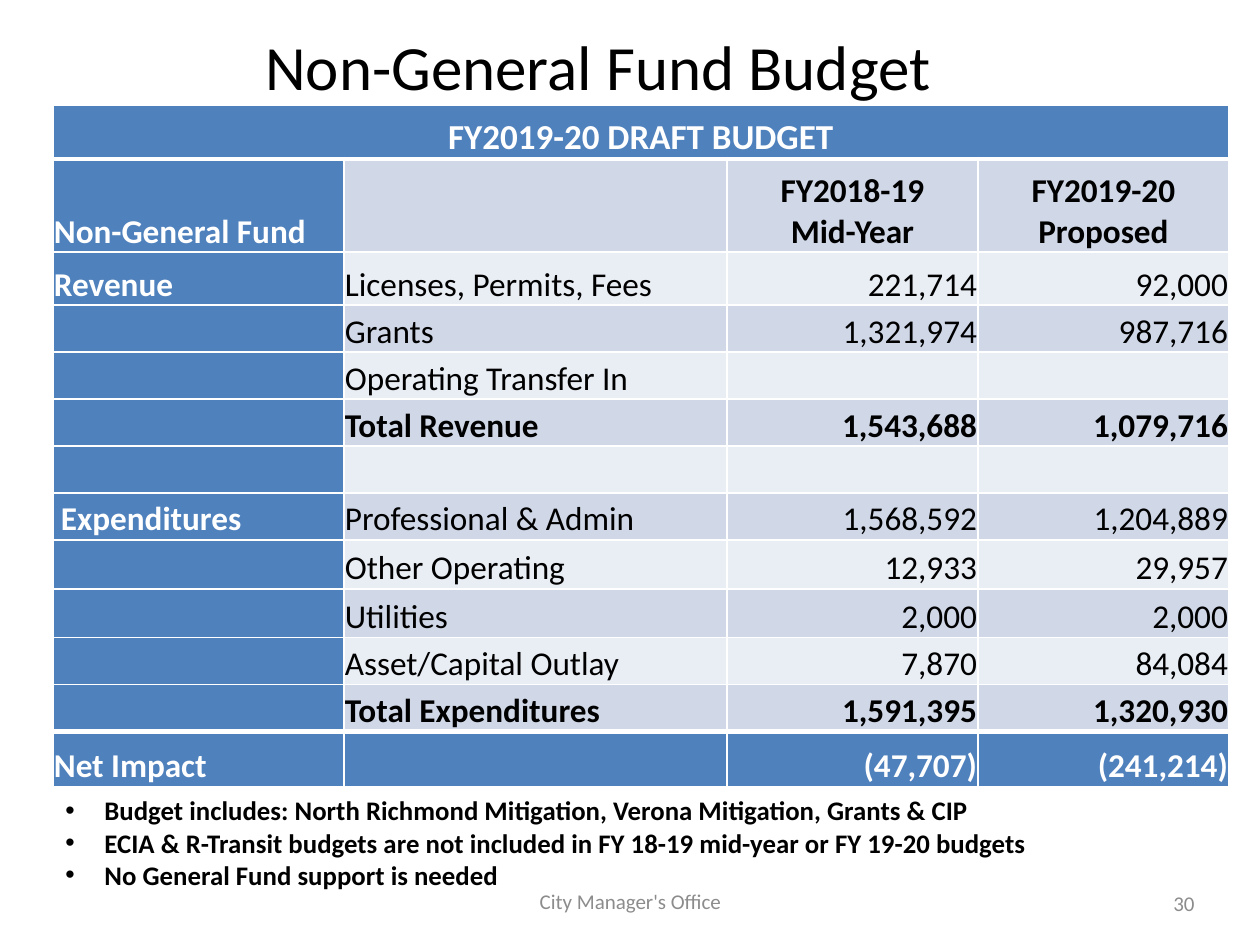
from lxml.etree import SubElement
from pptx import Presentation
from pptx.dml.color import RGBColor
from pptx.enum.text import MSO_ANCHOR as Anchor, PP_ALIGN as Align
from pptx.oxml.ns import qn
from pptx.util import Emu, Pt

PX = 914400 / 126
FONT = "Calibri"
BLUE = RGBColor(0x4F, 0x81, 0xBD)
DARK_BAND = RGBColor(0xD0, 0xD8, 0xE8)
LIGHT_BAND = RGBColor(0xE9, 0xED, 0xF4)
WHITE = RGBColor(0xFF, 0xFF, 0xFF)
BLACK = RGBColor(0, 0, 0)
GREY = RGBColor(0x8C, 0x8C, 0x8C)

COLUMN_WIDTHS = (291, 383, 251, 251)
ROW_HEIGHTS = (54, 93, 53, 47, 47, 47, 47, 47, 49, 49, 47, 47, 55)
BUDGET = (
    ("FY2019-20 DRAFT BUDGET", "", "", ""),
    ("Non-General Fund", "", "FY2018-19\nMid-Year", "FY2019-20\nProposed"),
    ("Revenue", "Licenses, Permits, Fees", "221,714", "92,000"),
    ("", "Grants", "1,321,974", "987,716"),
    ("", "Operating Transfer In", "", ""),
    ("", "Total Revenue", "1,543,688", "1,079,716"),
    ("", "", "", ""),
    ("Expenditures", "Professional & Admin", "1,568,592", "1,204,889"),
    ("", "Other Operating", "12,933", "29,957"),
    ("", "Utilities", "2,000", "2,000"),
    ("", "Asset/Capital Outlay", "7,870", "84,084"),
    ("", "Total Expenditures", "1,591,395", "1,320,930"),
    ("Net Impact", "", "(47,707)", "(241,214)"),
)
NOTES = (
    "Budget includes: North Richmond Mitigation, Verona Mitigation, Grants & CIP\n"
    "ECIA & R-Transit budgets are not included in FY 18-19 mid-year or FY 19-20 budgets\n"
    "No General Fund support is needed"
)


def px(length):
    """Turn a length in px into EMU."""
    return Emu(round(length * PX))


def put_text(frame, text, size=19, color=BLACK, bold=False, align=Align.LEFT, bullet_indent=0):
    """Write each line of the text as one formatted paragraph."""
    for index, line in enumerate(text.split("\n")):
        para = frame.add_paragraph() if index else frame.paragraphs[0]
        if bullet_indent:
            props = para._p.get_or_add_pPr()
            props.set("marL", str(px(bullet_indent)))
            props.set("indent", str(-px(bullet_indent)))
            SubElement(props, qn("a:buFont"), typeface="Arial")
            SubElement(props, qn("a:buChar"), char="•")
        para.alignment = align
        span = para.add_run()
        span.text = line
        span.font.name = FONT
        span.font.size = Pt(size)
        span.font.bold = bold
        span.font.color.rgb = color


def add_text(page, box, text, anchor=Anchor.MIDDLE, **text_format):
    """Add a wrapping text box to the page."""
    frame = page.shapes.add_textbox(*map(px, box)).text_frame
    frame.word_wrap = True
    frame.vertical_anchor = anchor
    put_text(frame, text, **text_format)


def set_borders(cell, top=1, bottom=1):
    """Give a cell white borders with the widths in points."""
    props = cell._tc.get_or_add_tcPr()
    for side, width in (("L", 1), ("R", 1), ("T", top), ("B", bottom)):
        line = SubElement(props, qn(f"a:ln{side}"), w=str(Pt(width)))
        fill = SubElement(line, qn("a:solidFill"))
        SubElement(fill, qn("a:srgbClr"), val=str(WHITE))


def fill_cell(cell, text, row, column):
    """Style one budget cell by its row and column."""
    last = len(BUDGET) - 1
    strong = column == 0 or row in (0, last)
    total = BUDGET[row][1].startswith("Total")
    set_borders(
        cell,
        top=3 if row in (1, last) else 1,
        bottom=3 if row in (0, last - 1) else 1,
    )
    cell.fill.solid()
    cell.fill.fore_color.rgb = BLUE if strong else DARK_BAND if row % 2 else LIGHT_BAND
    cell.margin_left = px(8 if text == "Expenditures" else 1)
    cell.margin_right = cell.margin_top = px(1)
    cell.margin_bottom = 0
    cell.vertical_anchor = Anchor.BOTTOM
    if text:
        centred = row == 0 or (row == 1 and column > 0)
        put_text(
            cell.text_frame,
            text,
            size=20 if row == 0 else 19,
            color=WHITE if strong else BLACK,
            bold=strong or total or row == 1,
            align=Align.CENTER if centred else Align.RIGHT if column > 1 else Align.LEFT,
        )


def add_budget_table(page, left, top):
    """Add the budget table with its top left corner at the given place."""
    table = page.shapes.add_table(
        len(ROW_HEIGHTS), len(COLUMN_WIDTHS),
        px(left), px(top), px(sum(COLUMN_WIDTHS)), px(sum(ROW_HEIGHTS)),
    ).table
    table.first_row = table.horz_banding = False
    for column, width in zip(table.columns, COLUMN_WIDTHS):
        column.width = px(width)
    for row, height in zip(table.rows, ROW_HEIGHTS):
        row.height = px(height)
    for row, texts in enumerate(BUDGET):
        for column, text in enumerate(texts):
            fill_cell(table.cell(row, column), text, row, column)
    table.cell(0, 0).merge(table.cell(0, len(COLUMN_WIDTHS) - 1))


def add_footer(page, left, top):
    """Add the office name and the page number."""
    add_text(page, (left, top, 399, 50), "City Manager's Office",
             size=12, color=GREY, align=Align.CENTER)
    add_text(page, (left + 693, top + 2, 83, 50), "30",
             size=12, color=GREY, align=Align.RIGHT)


def main():
    """Build and save the budget slide."""
    deck = Presentation()
    deck.slide_width, deck.slide_height = px(1260), px(945)
    page = deck.slides.add_slide(deck.slide_layouts[6])
    add_budget_table(page, 53, 105)
    add_text(page, (31, 21, 1134, 88), "Non-General Fund Budget", size=36, align=Align.CENTER)
    add_text(page, (53, 788, 1040, 110), NOTES, anchor=Anchor.TOP,
             size=15.3, bold=True, bullet_indent=39)
    add_footer(page, 431, 876)
    deck.save("out.pptx")


if __name__ == "__main__":
    main()
